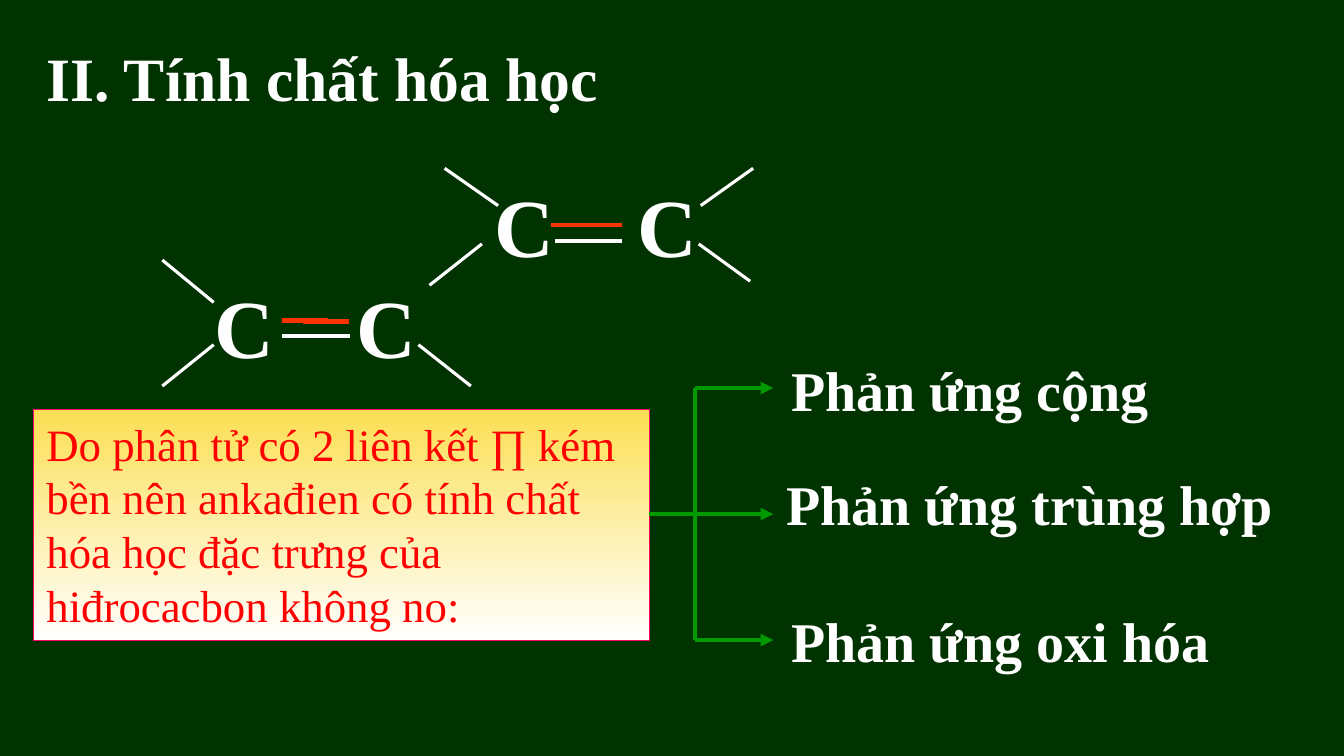
import pptx
import pptx.dml.color
import pptx.enum.dml
import pptx.enum.shapes
import pptx.enum.text
import pptx.oxml
import pptx.oxml.ns
import pptx.util
from pptx.util import Inches

FONT = "Times New Roman"
WHITE, RED, GREEN = "FFFFFF", "FF3300", "009900"


def color(code):
    """Turn a hex string into a colour."""
    return pptx.dml.color.RGBColor.from_string(code)


def add_xml(parent, tag, **attrs):
    """Append an element to its parent and return it."""
    child = pptx.oxml.parse_xml(f"<{tag} {pptx.oxml.ns.nsdecls('a')}/>")
    for name, value in attrs.items():
        child.set(name, str(value))
    parent.append(child)
    return child


def write(shape, text, size, code, bold=True, tab=None):
    """Fill a shape with one paragraph of text."""
    frame = shape.text_frame
    frame.word_wrap = True
    frame.auto_size = pptx.enum.text.MSO_AUTO_SIZE.SHAPE_TO_FIT_TEXT
    frame.vertical_anchor = pptx.enum.text.MSO_ANCHOR.TOP
    frame.margin_left = frame.margin_right = Inches(0.13)
    frame.margin_top = frame.margin_bottom = Inches(0.07)
    line = frame.paragraphs[0]
    line.text = text
    line.alignment = pptx.enum.text.PP_ALIGN.LEFT
    props = line._p.get_or_add_pPr()
    add_xml(add_xml(props, "a:spcBef"), "a:spcPct", val=50000)
    if tab:
        stops = add_xml(props, "a:tabLst")
        add_xml(stops, "a:tab", pos=Inches(tab), algn="l")
    font = line.font
    font.name, font.size, font.bold = FONT, pptx.util.Pt(size), bold
    font.color.rgb = color(code)


def add_text(slide, box, text, size, tab=None):
    """Add a white bold text box."""
    shape = slide.shapes.add_textbox(*map(Inches, box))
    write(shape, text, size, WHITE, tab=tab)


def add_line(slide, ends, code, width, arrow=False):
    """Draw a straight line, with an arrowhead at its end if asked."""
    kind = pptx.enum.shapes.MSO_CONNECTOR.STRAIGHT
    line = slide.shapes.add_connector(kind, *map(Inches, ends))
    line.line.color.rgb = color(code)
    line.line.width = pptx.util.Pt(width)
    if arrow:
        add_xml(line.line._get_or_add_ln(), "a:tailEnd", type="triangle")
    add_xml(line._element.spPr, "a:effectLst")


def add_pair(slide, box, arms, bonds):
    """Draw two carbons with their single arms and double bond."""
    left, top = box[:2]
    add_text(slide, box, "C\tC", 59, tab=1.41)
    for x1, y1, x2, y2 in arms:
        ends = left + x1, top + y1, left + x2, top + y2
        add_line(slide, ends, WHITE, 2.25)
    for start, end, y, code in bonds:
        ends = left + start, top + y, left + end, top + y
        add_line(slide, ends, code, 3)


def add_cause(slide, box, text):
    """Add the shaded box that states the cause."""
    kind = pptx.enum.shapes.MSO_SHAPE.RECTANGLE
    shape = slide.shapes.add_shape(kind, *map(Inches, box))
    shape.shadow.inherit = False
    shape.fill.gradient()
    shape.fill.gradient_angle = 270
    for stop, code in zip(shape.fill.gradient_stops, ("FBDF53", WHITE)):
        stop.color.rgb = color(code)
    shape.line.color.rgb = color("FF0066")
    shape.line.width = pptx.util.Pt(0.75)
    write(shape, text, 32, "FF0000", bold=False)


def add_fork(slide, box, root):
    """Draw a stem with three arrows, fed from the root on the left."""
    left, top, width, height = box
    middle = top + height / 2
    add_line(slide, (root, middle, left, middle), GREEN, 3)
    add_line(slide, (left, top, left, top + height), GREEN, 3)
    for step in range(3):
        y = top + step * height / 2
        add_line(slide, (left, y, left + width, y), GREEN, 3, arrow=True)


def build():
    """Build the slide and save it."""
    deck = pptx.Presentation()
    deck.slide_width, deck.slide_height = Inches(13.33), Inches(7.5)
    slide = deck.slides.add_slide(deck.slide_layouts[6])
    slide.background.fill.solid()
    slide.background.fill.fore_color.rgb = color("003300")

    add_text(slide, (0.33, 0.33, 11.11, 1.68), "II. Tính chất hóa học", 44)
    add_cause(slide, (0.33, 4.06, 6.11, 2.29),
              "Do phân tử có 2 liên kết ∏ kém bền nên ankađien có tính chất "
              "hóa học đặc trưng của hiđrocacbon không no:")
    add_pair(slide, (2, 2.67, 3.33, 1.12),
             [(0.12, 0.33, -0.39, -0.09), (0.12, 0.75, -0.39, 1.16),
              (2.67, 1.16, 2.15, 0.75), (2.78, -0.25, 2.26, 0.16)],
             [(0.8, 1.47, 0.66, WHITE), (1.01, 1.46, 0.52, RED),
              (0.8, 1.25, 0.51, RED)])
    add_pair(slide, (4.78, 1.67, 3.33, 1.12),
             [(0.16, 0.37, -0.37, 0), (2.66, 1.12, 2.15, 0.75),
              (2.69, 0, 2.17, 0.37)],
             [(0.72, 1.39, 0.72, WHITE), (0.69, 1.14, 0.56, RED),
              (0.94, 1.39, 0.56, RED)])
    add_fork(slide, (6.89, 3.85, 0.78, 2.5), 6.44)
    for left, top, width, text in (
            (7.72, 3.46, 4.11, "Phản ứng cộng"),
            (7.67, 4.59, 5.22, "Phản ứng trùng hợp"),
            (7.72, 5.95, 4.89, "Phản ứng oxi hóa")):
        add_text(slide, (left, top, width, 0.81), text, 40)
    deck.save("out.pptx")


if __name__ == "__main__":
    build()
